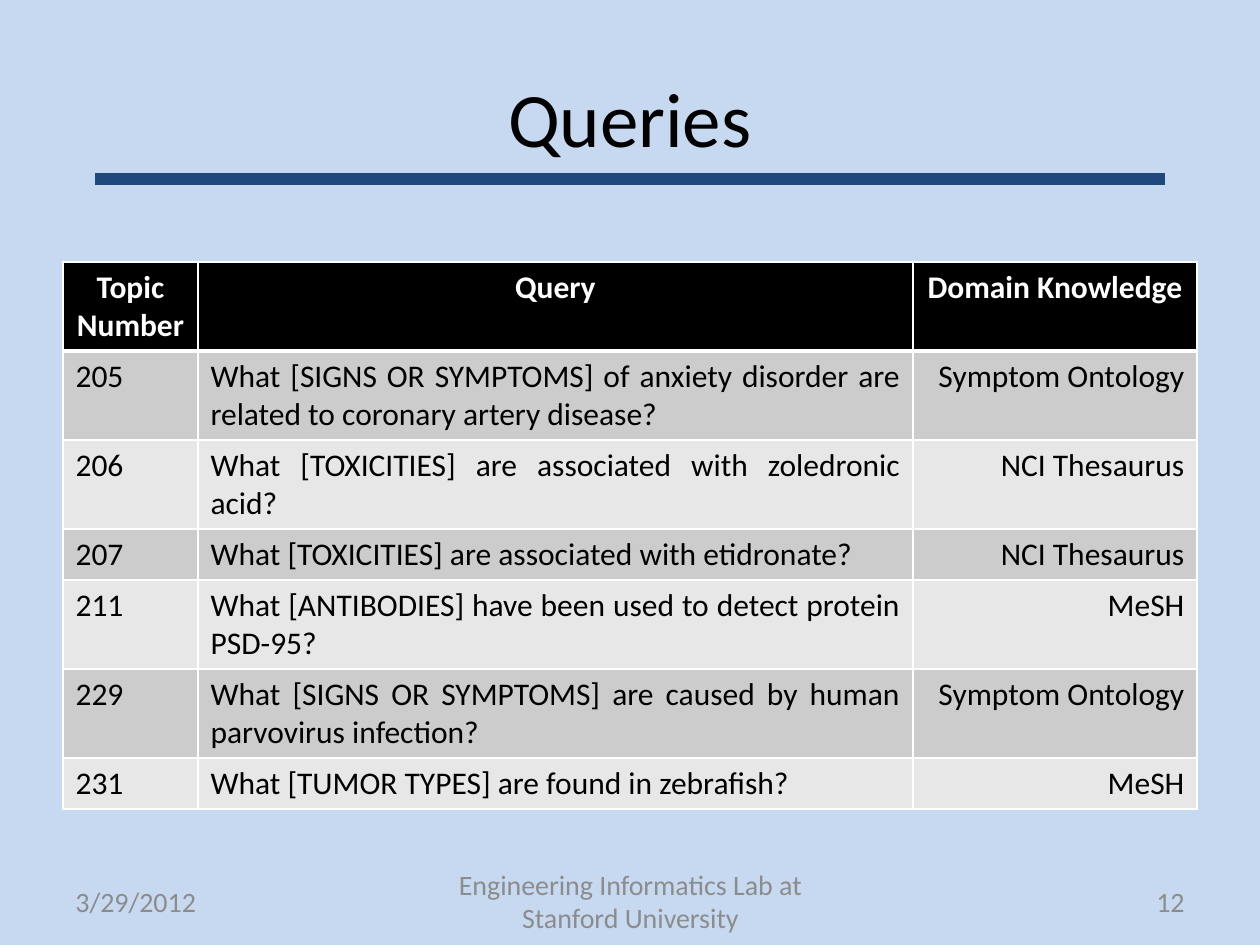
from lxml import etree
from pptx import Presentation
from pptx.dml.color import RGBColor
from pptx.enum.shapes import MSO_CONNECTOR
from pptx.enum.text import MSO_ANCHOR, PP_ALIGN
from pptx.oxml.ns import qn
from pptx.util import Emu, Pt

PX_PER_INCH = 126
FONT = "Calibri"
BACKGROUND = RGBColor(0xC6, 0xD9, 0xF1)
NAVY = RGBColor(0x1F, 0x49, 0x7D)
BLACK = RGBColor(0x00, 0x00, 0x00)
WHITE = RGBColor(0xFF, 0xFF, 0xFF)
GRAY = RGBColor(0x8C, 0x8C, 0x8C)
BANDS = [RGBColor(0xCC, 0xCC, 0xCC), RGBColor(0xE7, 0xE7, 0xE7)]

HEADERS = ["Topic Number", "Query", "Domain Knowledge"]
QUERIES = [
    ("205", "What [SIGNS OR SYMPTOMS] of anxiety disorder are related to "
            "coronary artery disease? ", "Symptom Ontology"),
    ("206", "What [TOXICITIES] are associated with zoledronic acid?", "NCI Thesaurus"),
    ("207", "What [TOXICITIES] are associated with etidronate?", "NCI Thesaurus"),
    ("211", "What [ANTIBODIES] have been used to detect protein PSD-95?", "MeSH"),
    ("229", "What [SIGNS OR SYMPTOMS] are caused by human parvovirus infection?",
     "Symptom Ontology"),
    ("231", "What [TUMOR TYPES] are found in zebrafish?", "MeSH"),
]
COLUMN_WIDTHS = [135, 715, 284]
ONE_LINE, TWO_LINES = 51, 89
ROW_HEIGHTS = [TWO_LINES, TWO_LINES, TWO_LINES, ONE_LINE, TWO_LINES, TWO_LINES, ONE_LINE]
BODY_ALIGNS = [PP_ALIGN.JUSTIFY, PP_ALIGN.JUSTIFY, PP_ALIGN.RIGHT]


def px(length):
    return Emu(round(length * 914400 / PX_PER_INCH))


def write(frame, text, size, color, align, bold=False):
    paragraph = frame.paragraphs[0]
    paragraph.text = text
    paragraph.alignment = align
    font = paragraph.font
    font.name, font.size, font.bold = FONT, Pt(size), bold
    font.color.rgb = color


def add_text(slide, box, text, size, color, align):
    frame = slide.shapes.add_textbox(*map(px, box)).text_frame
    frame.word_wrap = True
    frame.vertical_anchor = MSO_ANCHOR.MIDDLE
    write(frame, text, size, color, align)


def add_rule(slide, left, right, y):
    rule = slide.shapes.add_connector(
        MSO_CONNECTOR.STRAIGHT, px(left), px(y), px(right), px(y))
    rule.line.color.rgb = NAVY
    rule.line.width = Pt(7)
    etree.SubElement(rule._element.spPr, qn("a:effectLst"))


def set_borders(cell, widths):
    """Draw white borders; they must come before the fill in the cell XML."""
    properties = cell._tc.get_or_add_tcPr()
    for position, (side, width) in enumerate(widths.items()):
        border = etree.Element(qn(f"a:ln{side}"), w=str(Pt(width)))
        fill = etree.SubElement(border, qn("a:solidFill"))
        etree.SubElement(fill, qn("a:srgbClr"), val=str(WHITE))
        properties.insert(position, border)


def add_query_table(slide, left, top):
    table = slide.shapes.add_table(
        len(ROW_HEIGHTS), len(COLUMN_WIDTHS), px(left), px(top),
        px(sum(COLUMN_WIDTHS)), px(sum(ROW_HEIGHTS))).table
    for column, width in zip(table.columns, COLUMN_WIDTHS):
        column.width = px(width)
    for row, height in zip(table.rows, ROW_HEIGHTS):
        row.height = px(height)

    for r, texts in enumerate([HEADERS, *QUERIES]):
        is_header = r == 0
        for c, text in enumerate(texts):
            cell = table.cell(r, c)
            cell.fill.solid()
            cell.fill.fore_color.rgb = BLACK if is_header else BANDS[(r - 1) % 2]
            write(cell.text_frame, text, 18, WHITE if is_header else BLACK,
                  PP_ALIGN.CENTER if is_header else BODY_ALIGNS[c], is_header)
            # The thick line separates the header from the queries
            set_borders(cell, {"L": 1, "R": 1, "T": 3 if r == 1 else 1,
                               "B": 3 if is_header else 1})


def main():
    presentation = Presentation()
    presentation.slide_width, presentation.slide_height = px(1260), px(945)
    slide = presentation.slides.add_slide(presentation.slide_layouts[6])
    slide.background.fill.solid()
    slide.background.fill.fore_color.rgb = BACKGROUND

    # Title and queries
    add_text(slide, (63, 38, 1134, 157), "Queries", 44, BLACK, PP_ALIGN.CENTER)
    add_query_table(slide, 63, 262)

    # Footer
    for left, width, text, align in [
        (63, 294, "3/29/2012", PP_ALIGN.LEFT),
        (431, 399, "Engineering Informatics Lab at Stanford University", PP_ALIGN.CENTER),
        (903, 294, "12", PP_ALIGN.RIGHT),
    ]:
        add_text(slide, (left, 876, width, 50), text, 16, GRAY, align)

    # Rule under the title
    add_rule(slide, 95, 1165, 179)
    presentation.save("out.pptx")


if __name__ == "__main__":
    main()
